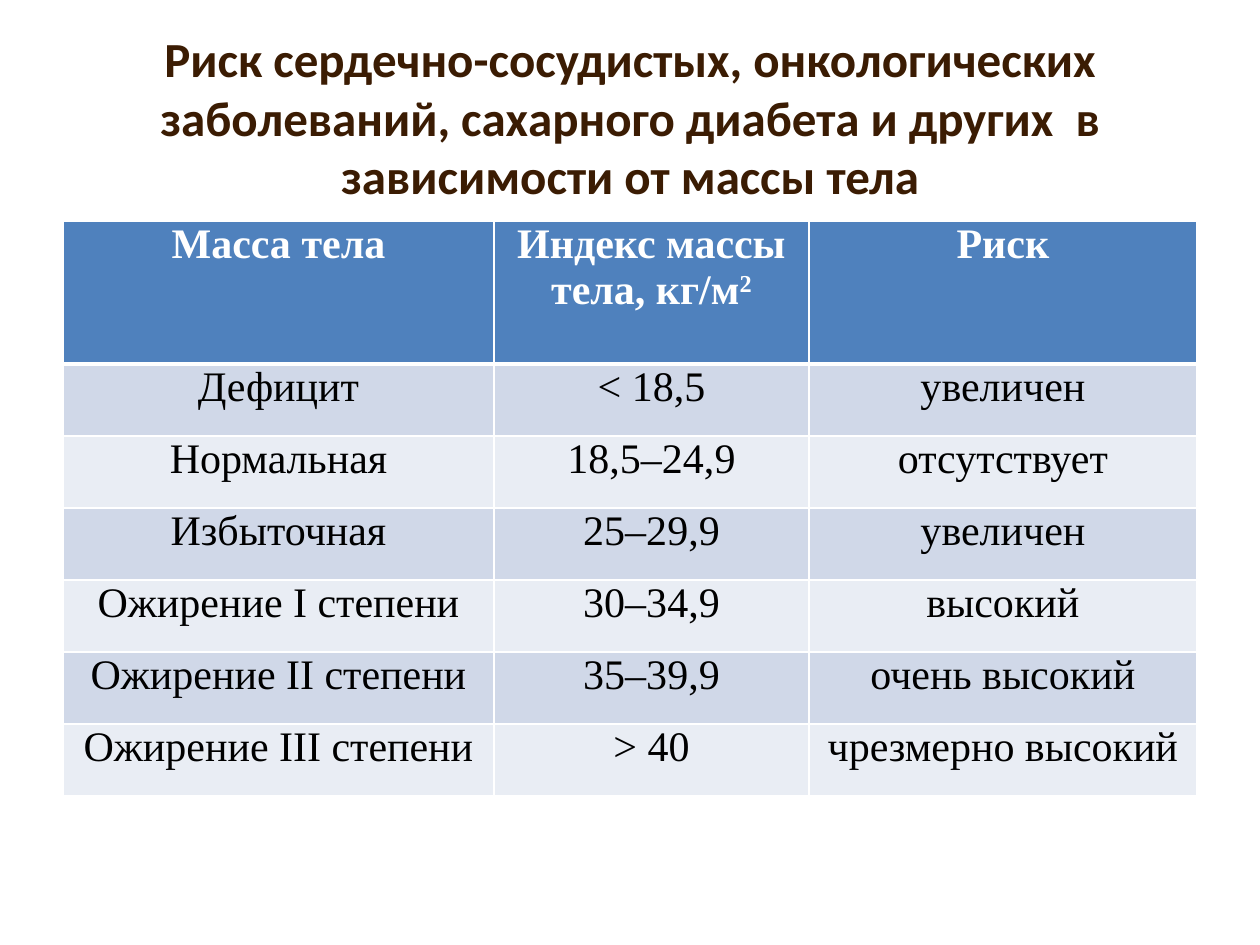
import pptx
import pptx.dml.color
import pptx.enum.text
import pptx.oxml
import pptx.oxml.ns
import pptx.util

RGB = pptx.dml.color.RGBColor
BROWN = RGB(0x3B, 0x1C, 0x03)
WHITE = RGB(0xFF, 0xFF, 0xFF)
BLACK = RGB(0, 0, 0)
BLUE = RGB(0x4F, 0x81, 0xBD)
BANDS = RGB(0xD0, 0xD8, 0xE8), RGB(0xE9, 0xED, 0xF4)

SCALE = 914400 // 126
HEAD = "Calibri"
BODY = "Times New Roman"

TITLE = ("Риск сердечно-сосудистых, онкологических заболеваний, "
         "сахарного диабета и других  в зависимости от массы тела")
COLS = 431, 315, 388
TALL, LOW = 143, 72
ROWS = [
    ("Масса тела", "Индекс массы тела, кг/м^2", "Риск"),
    ("Дефицит", "< 18,5", "увеличен"),
    ("Нормальная", "18,5–24,9", "отсутствует"),
    ("Избыточная", "25–29,9", "увеличен"),
    ("Ожирение I степени", "30–34,9", "высокий"),
    ("Ожирение II степени", "35–39,9", "очень высокий"),
    ("Ожирение III степени", "> 40", "чрезмерно высокий"),
]


def px(num):
    return pptx.util.Emu(num * SCALE)


class Deck:
    def __init__(self, wide, high):
        self.file = pptx.Presentation()
        self.file.slide_width = px(wide)
        self.file.slide_height = px(high)
        self.slide = self.file.slides.add_slide(self.file.slide_layouts[6])

    def label(self, para, text, face, size, color, bold):
        """Fill a centred paragraph; what follows ^ is superscript."""
        base, _, power = text.partition("^")
        para.alignment = pptx.enum.text.PP_ALIGN.CENTER
        font = para.font
        font.name, font.size, font.bold = face, pptx.util.Pt(size), bold
        font.color.rgb = color
        para.add_run().text = base
        if power:
            run = para.add_run()
            run.text = power
            run._r.get_or_add_rPr().set("baseline", "30000")

    def title(self, text, *box):
        frame = self.slide.shapes.add_textbox(*map(px, box)).text_frame
        frame.word_wrap = True
        frame.vertical_anchor = pptx.enum.text.MSO_ANCHOR.MIDDLE
        self.label(frame.paragraphs[0], text, HEAD, 28, BROWN, True)

    def edge(self, cell, side, points):
        line = pptx.oxml.parse_xml(
            f'<a:{side} {pptx.oxml.ns.nsdecls("a")} w="{points * 12700}">'
            f'<a:solidFill><a:srgbClr val="{WHITE}"/></a:solidFill></a:{side}>')
        cell._tc.get_or_add_tcPr().append(line)

    def cell(self, cell, text, row):
        top = row == 0
        cell.margin_left = cell.margin_right = px(9)
        cell.margin_top = cell.margin_bottom = 0
        thick = {"lnT": row == 1, "lnB": top}
        for side in ("lnL", "lnR", "lnT", "lnB"):
            self.edge(cell, side, 3 if thick.get(side) else 1)
        cell.fill.solid()
        cell.fill.fore_color.rgb = BLUE if top else BANDS[(row - 1) % 2]
        self.label(cell.text_frame.paragraphs[0], text, BODY, 24,
                   WHITE if top else BLACK, top)

    def table(self, rows, cols, left, top):
        highs = [TALL] + [LOW] * (len(rows) - 1)
        box = map(px, (left, top, sum(cols), sum(highs)))
        grid = self.slide.shapes.add_table(len(rows), len(cols), *box).table
        for col, wide in zip(grid.columns, cols):
            col.width = px(wide)
        for row, (texts, high) in enumerate(zip(rows, highs)):
            grid.rows[row].height = px(high)
            for col, text in enumerate(texts):
                self.cell(grid.cell(row, col), text, row)


def main():
    deck = Deck(1260, 945)
    deck.title(TITLE, 63, 38, 1134, 157)
    deck.table(ROWS, COLS, 63, 221)
    deck.file.save("out.pptx")


if __name__ == "__main__":
    main()
